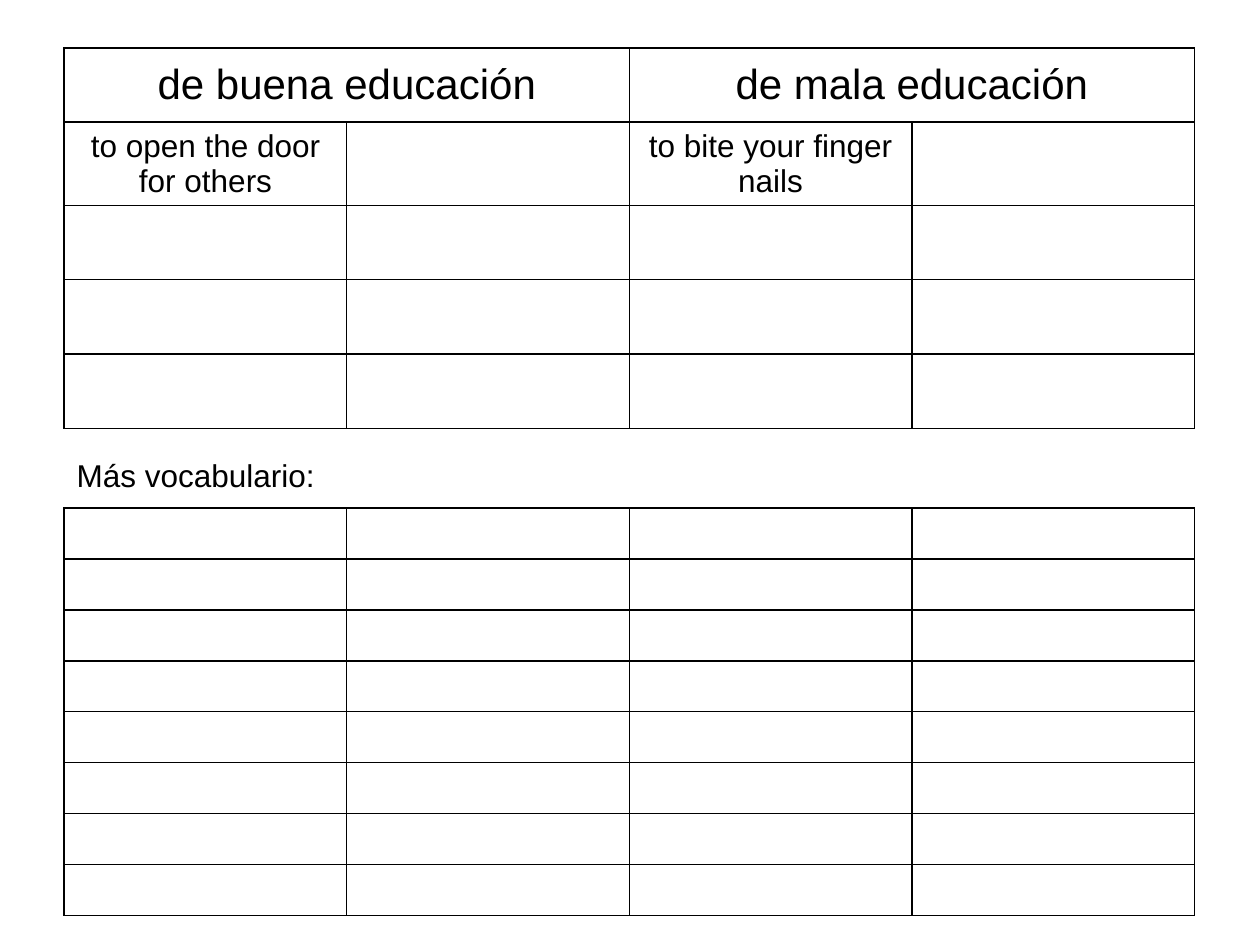
"""Build a Spanish manners vocabulary worksheet with two tables."""
from lxml.etree import SubElement
from pptx import Presentation
from pptx.dml.color import RGBColor
from pptx.enum.text import MSO_ANCHOR, PP_ALIGN
from pptx.oxml.ns import qn
from pptx.util import Inches, Pt

BLACK = RGBColor(0, 0, 0)
WHITE = RGBColor(255, 255, 255)
COLUMNS = 4
LEFT = Inches(0.51)
COLUMN_WIDTH = Inches(8.97) // COLUMNS


def style_text(para, size):
    para.font.name = "Arial"
    para.font.size = Pt(size)
    para.font.color.rgb = BLACK


def add_grid(page, top, rows, row_height):
    table = page.shapes.add_table(
        rows, COLUMNS, LEFT, top, COLUMN_WIDTH * COLUMNS, row_height * rows
    ).table
    table.first_row = False
    table.horz_banding = False
    for column in table.columns:
        column.width = COLUMN_WIDTH
    for row in table.rows:
        row.height = row_height
    for cell in table.iter_cells():
        properties = cell._tc.get_or_add_tcPr()
        for side in ("lnL", "lnR", "lnT", "lnB"):
            border = SubElement(properties, qn(f"a:{side}"), w=str(Pt(1)))
            paint = SubElement(border, qn("a:solidFill"))
            SubElement(paint, qn("a:srgbClr"), val=str(BLACK))
        cell.fill.background()
        cell.vertical_anchor = MSO_ANCHOR.MIDDLE
        para = cell.text_frame.paragraphs[0]
        para.alignment = PP_ALIGN.CENTER
        style_text(para, 18)
    return table


deck = Presentation()
deck.slide_width, deck.slide_height = Inches(10), Inches(7.5)
page = deck.slides.add_slide(deck.slide_layouts[6])
page.background.fill.solid()
page.background.fill.fore_color.rgb = WHITE

manners = add_grid(page, Inches(0.38), 5, Inches(0.59))
topics = (
    ("de buena educación", "to open the door for others"),
    ("de mala educación", "to bite your finger nails"),
)
for index, (heading, example) in enumerate(topics):
    column = index * 2
    title = manners.cell(0, column)
    title.merge(manners.cell(0, column + 1))
    for cell, text, size in (
        (title, heading, 24),
        (manners.cell(1, column), example, 18),
    ):
        para = cell.text_frame.paragraphs[0]
        para.add_run().text = text
        style_text(para, size)

add_grid(page, Inches(4.03), 8, Inches(3.24) // 8)

box = page.shapes.add_textbox(LEFT, Inches(3.57), Inches(3.32), Inches(0.4))
box.text_frame.word_wrap = True
label = box.text_frame.paragraphs[0]
label.add_run().text = "Más vocabulario:"
style_text(label, 18)

deck.save("out.pptx")
